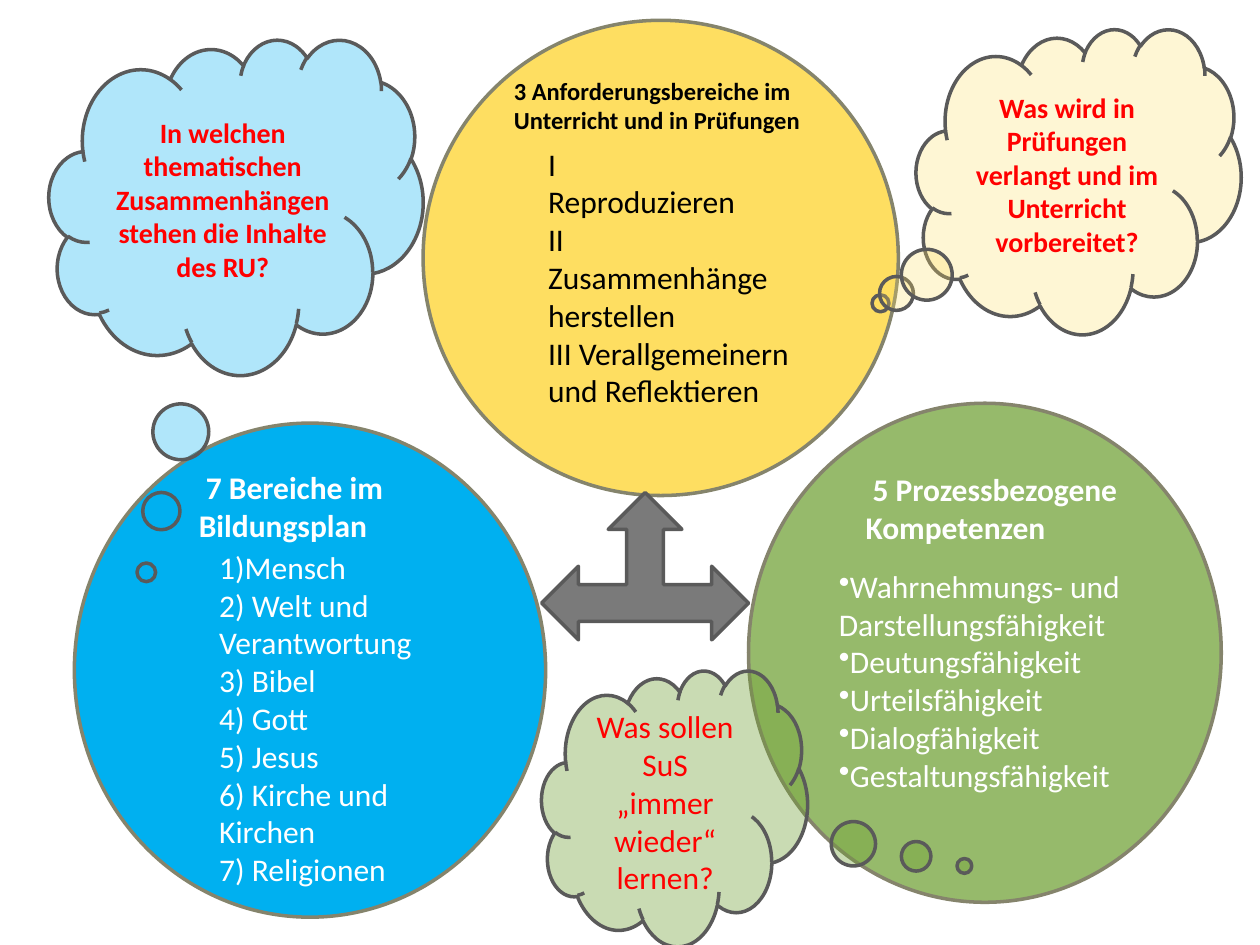
from pptx import Presentation
from pptx.dml.color import RGBColor
from pptx.enum.shapes import MSO_SHAPE
from pptx.enum.text import MSO_ANCHOR, PP_ALIGN
from pptx.oxml.ns import qn
from pptx.util import Cm, Pt
from lxml.etree import SubElement

FONT = "Calibri"
WHITE, BLACK, RED = "FFFFFF", "000000", "FF0000"
BLUE, GREEN, YELLOW = "00B0F0", "6EA032", "FEDE61"
RIM, OUTLINE, ARROW = "85846C", "5A5A5A", "7A7A7A"


def color(hex_string):
    return RGBColor.from_string(hex_string)


class SlideBuilder:
    def __init__(self, page):
        self.page = page

    def shape(self, kind, place, fill, line, opacity=100):
        """Add a filled, outlined preset shape; place is left, top, width, height in cm."""
        shape = self.page.shapes.add_shape(kind, *map(Cm, place))
        shape.shadow.inherit = False
        shape.fill.solid()
        shape.fill.fore_color.rgb = color(fill)
        if opacity < 100:
            tint = shape.fill._xPr.find(qn("a:solidFill"))[0]
            SubElement(tint, qn("a:alpha")).set("val", str(opacity * 1000))
        shape.line.color.rgb = color(line)
        shape.line.width = Pt(2)
        return shape

    def circle(self, place, fill, opacity=100):
        self.shape(MSO_SHAPE.OVAL, place, fill, RIM, opacity)

    def cloud(self, place, tail, fill, opacity, lines, size=16, bold=True):
        """Add a thought cloud; tail is the tip's offset from the centre."""
        cloud = self.shape(MSO_SHAPE.CLOUD_CALLOUT, place, fill, OUTLINE, opacity)
        cloud.adjustments[0], cloud.adjustments[1] = tail
        cloud.text_frame.vertical_anchor = MSO_ANCHOR.MIDDLE
        self.set_text(cloud, lines, RED, size, bold, PP_ALIGN.CENTER)

    def text(self, place, lines, ink, size=18, bold=False, bullet=None, indent=0):
        box = self.page.shapes.add_textbox(*map(Cm, place))
        self.set_text(box, lines, ink, size, bold, PP_ALIGN.LEFT)
        for para in box.text_frame.paragraphs:
            properties = para._p.get_or_add_pPr()
            properties.set("indent", str(Cm(indent)))
            if bullet:
                SubElement(properties, qn("a:buChar")).set("char", bullet)

    def set_text(self, box, lines, ink, size, bold, alignment):
        frame = box.text_frame
        frame.word_wrap = True
        frame.text = "\n".join(lines)
        for para in frame.paragraphs:
            para.alignment = alignment
            para.font.name = FONT
            para.font.size = Pt(size)
            para.font.bold = bold
            para.font.color.rgb = color(ink)


def main():
    deck = Presentation()
    deck.slide_width, deck.slide_height = Cm(25.4), Cm(19.05)
    builder = SlideBuilder(deck.slides.add_slide(deck.slide_layouts[6]))

    builder.circle((1.5, 8.53, 9.5, 9.96), BLUE)
    builder.circle((15.09, 8.13, 9.53, 10.06), GREEN, 72)
    builder.circle((8.53, 0.41, 9.58, 9.58), YELLOW)

    builder.text((3.76, 9.32, 4.57, 1.6), ["7 Bereiche im Bildungsplan"],
                 WHITE, bold=True, indent=0.14)
    builder.text((4.17, 10.92, 5.69, 5.59),
                 ["1)Mensch", "2) Welt und Verantwortung", "3) Bibel", "4) Gott",
                  "5) Jesus", "6) Kirche und Kirchen", "7) Religionen"], WHITE)

    builder.text((17.2, 9.35, 5.69, 1.8), ["5 Prozessbezogene Kompetenzen"],
                 WHITE, bold=True, indent=0.14)
    builder.text((16.66, 11.3, 6.81, 4.83),
                 ["Wahrnehmungs- und Darstellungsfähigkeit", "Deutungsfähigkeit",
                  "Urteilsfähigkeit", "Dialogfähigkeit", "Gestaltungsfähigkeit"],
                 WHITE, bullet="•")

    builder.text((10.11, 1.4, 6.55, 1.4),
                 ["3 Anforderungsbereiche im Unterricht und in Prüfungen"],
                 BLACK, size=14, bold=True)
    builder.text((10.8, 2.79, 5.36, 6.35),
                 ["I", "Reproduzieren", "II Zusammenhänge herstellen",
                  "III Verallgemeinern und Reflektieren"], BLACK)

    builder.cloud((0.99, 0.79, 7.54, 6.76), (-0.24, 1.09), BLUE, 31,
                  ["In welchen thematischen Zusammenhängen stehen die Inhalte des RU?"])
    builder.cloud((18.47, 0.58, 6.55, 6.15), (-0.61, 0.4), YELLOW, 27,
                  ["Was wird in", "Prüfungen", "verlangt und im Unterricht vorbereitet?"])
    builder.cloud((10.92, 13.51, 5.36, 5.56), (1.09, 0.21), GREEN, 37,
                  ["Was sollen SuS „immer wieder“", "lernen?"], size=18, bold=False)

    builder.shape(MSO_SHAPE.LEFT_RIGHT_UP_ARROW, (10.92, 9.93, 4.17, 2.97), ARROW, OUTLINE)
    deck.save("out.pptx")


if __name__ == "__main__":
    main()
